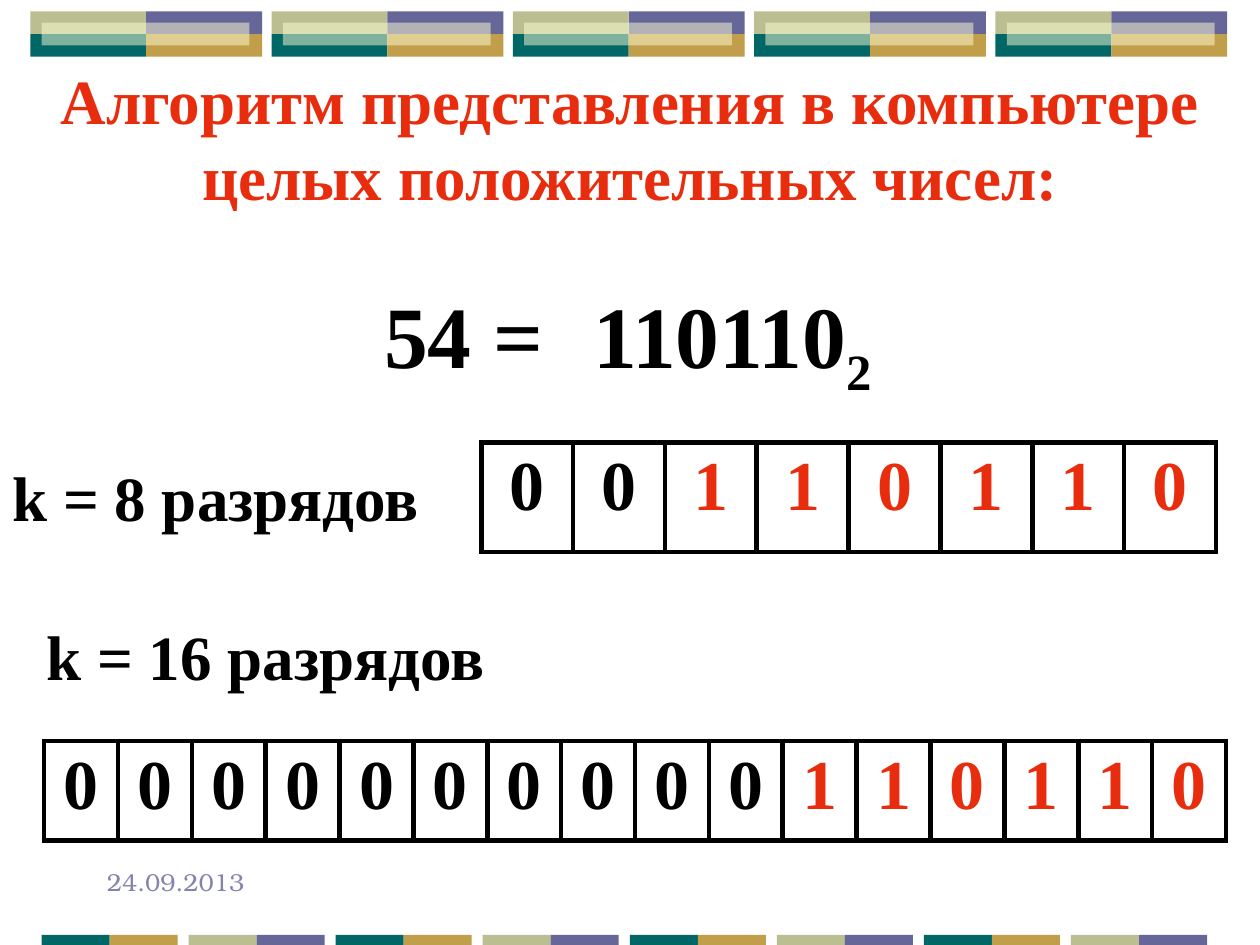
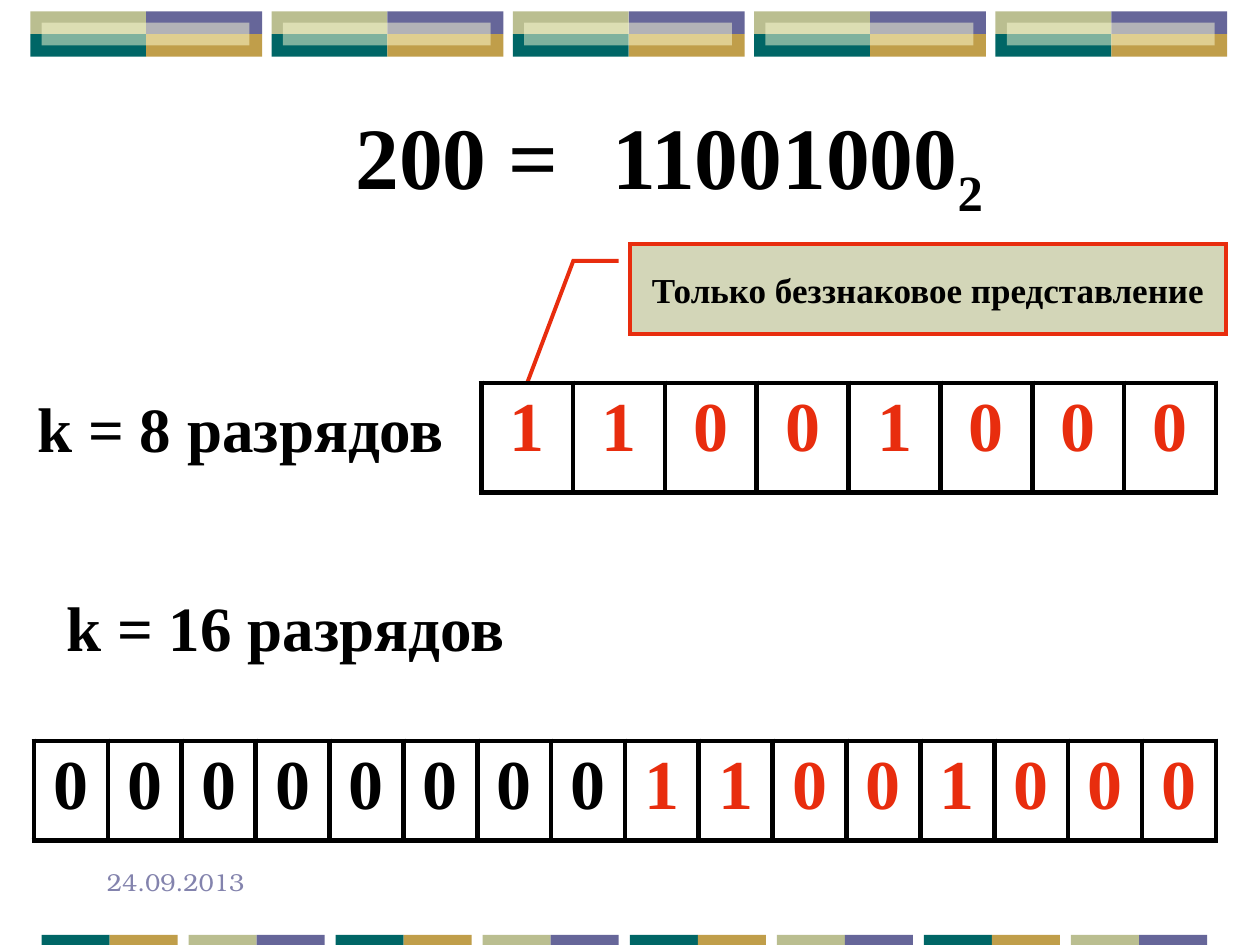
from lxml import etree
from pptx import Presentation
from pptx.dml.color import RGBColor
from pptx.enum import shapes, text
from pptx.oxml.ns import qn
from pptx.util import Inches, Pt

BLACK, RED, GRID = "000000", "E82D0E", "1F2039"
OLIVE, VIOLET, TEAL, GOLD = "BABE90", "666699", "006666", "C09E4A"
CREAM, CALLOUT_FILL, DATE_COLOR = "FEFED6", "D3D6B8", "8383AD"
SERIF, DATE_FONT = "Times New Roman", "TeX Gyre Bonum"


def rgb(color):
    return RGBColor.from_string(color)


def add_run(p, content, size, color=BLACK, font=SERIF, bold=True):
    r = p.add_run()
    r.text = content
    r.font.size, r.font.name, r.font.bold = Pt(size), font, bold
    r.font.color.rgb = rgb(color)
    return r


def add_rect(parent, left, top, width, height, color, alpha=None):
    sp = parent.add_shape(shapes.MSO_SHAPE.RECTANGLE, Inches(left), Inches(top),
                          Inches(width), Inches(height))
    sp.shadow.inherit = False
    sp.fill.solid()
    sp.fill.fore_color.rgb = rgb(color)
    sp.line.fill.background()
    if alpha is not None:
        clr = sp.element.spPr.find(qn("a:solidFill")).find(qn("a:srgbClr"))
        etree.SubElement(clr, qn("a:alpha")).set("val", str(alpha * 1000))


def add_bands(s, layout):
    """Draw the top and bottom bands and hand them over to the layout."""
    group = s.shapes.add_group_shape()
    band = group.shapes
    # Top band: five four-colour tiles with a pale strip over each
    half, row = 0.92, 0.18
    for i in range(5):
        left = 0.24 + i * 7.66 / 4
        for j, color in enumerate((OLIVE, VIOLET, TEAL, GOLD)):
            add_rect(band, left + j % 2 * half, 0.09 + j // 2 * row, half, row, color)
        add_rect(band, left + 0.09, 0.18, 1.65, row, CREAM, alpha=50)
    # Bottom band: eight two-colour bars
    for i in range(8):
        for j, color in enumerate((OLIVE, VIOLET) if i % 2 else (TEAL, GOLD)):
            add_rect(band, 0.33 + i * 8.17 / 7 + j * 0.54, 7.42, 0.54, 0.08, color)
    layout.shapes.element.append(group.element)


def place_text(sp, left, top, width, height):
    sp.left, sp.top = Inches(left), Inches(top)
    sp.width, sp.height = Inches(width), Inches(height)
    tf = sp.text_frame
    tf.word_wrap = True
    tf.auto_size = text.MSO_AUTO_SIZE.NONE
    tf.vertical_anchor = text.MSO_ANCHOR.TOP
    p = tf.paragraphs[0]
    p.alignment = text.PP_ALIGN.LEFT
    return p


def add_text(s, left, top, width, height):
    return place_text(s.shapes.add_textbox(0, 0, 0, 0), left, top, width, height)


def add_label(s, content, left, top, width):
    add_run(add_text(s, left, top, width, 0.7), content, 36)


def add_binary(s, digits, left, top, width):
    p = add_text(s, left, top, width, 0.93)
    add_run(p, digits, 50)
    base = add_run(p, "2", 50)
    base.font._element.set("baseline", "-25000")


def set_borders(cell, color, width=3):
    tcPr = cell._tc.get_or_add_tcPr()
    for i, side in enumerate(("lnL", "lnR", "lnT", "lnB")):
        ln = etree.Element(qn("a:" + side), w=str(Pt(width)))
        fill = etree.SubElement(ln, qn("a:solidFill"))
        etree.SubElement(fill, qn("a:srgbClr")).set("val", color)
        tcPr.insert(i, ln)


def add_grid(s, bits, left, top, width, height, color):
    """One-row table with a cell per bit; returns its cells."""
    table = s.shapes.add_table(1, bits, Inches(left), Inches(top),
                               Inches(width), Inches(height)).table
    table.first_row = table.horz_banding = False
    for i in range(bits):
        table.columns[i].width = Inches(width / bits)
        cell = table.cell(0, i)
        cell.fill.background()
        set_borders(cell, color)
    return [table.cell(0, i) for i in range(bits)]


def fill_digits(cells, digits):
    """Leading zeros in black, the number itself in red."""
    padding = len(cells) - len(digits)
    for i, (cell, digit) in enumerate(zip(cells, digits.zfill(len(cells)))):
        p = cell.text_frame.paragraphs[0]
        p.alignment = text.PP_ALIGN.CENTER
        add_run(p, digit, 40, BLACK if i < padding else RED)


def add_register(s, digits, bits, left, top, digits_on_top=True):
    """Two stacked grids, dark below and black above; one holds the digits."""
    width, height = {8: (5.83, 0.87), 16: (9.38, 0.79)}[bits]
    layers = [add_grid(s, bits, left, top, width, height, color)
              for color in (GRID, BLACK)]
    fill_digits(layers[digits_on_top], digits)


def add_callout(s, content, left, top, width, height, tail):
    sp = s.shapes.add_shape(shapes.MSO_SHAPE.LINE_CALLOUT_2, Inches(left), Inches(top),
                            Inches(width), Inches(height))
    for i, (x, y) in enumerate(tail):
        sp.adjustments[2 * i] = (y - top) / height
        sp.adjustments[2 * i + 1] = (x - left) / width
    sp.shadow.inherit = False
    sp.fill.solid()
    sp.fill.fore_color.rgb = rgb(CALLOUT_FILL)
    sp.line.color.rgb = rgb(RED)
    sp.line.width = Pt(2.25)
    etree.SubElement(sp.element.spPr.find(qn("a:ln")), qn("a:miter")).set("lim", "800000")
    tf = sp.text_frame
    tf.word_wrap = True
    tf.vertical_anchor = text.MSO_ANCHOR.MIDDLE
    p = tf.paragraphs[0]
    p.alignment = text.PP_ALIGN.CENTER
    add_run(p, content, 20)


def add_date(s):
    p = add_text(s, 0.75, 6.83, 2.08, 0.5)
    add_run(p, "24.09.2013", 14, DATE_COLOR, DATE_FONT, bold=False)


def build_54(s):
    number = "110110"
    p = place_text(s.shapes.title, 0, 0.44, 10, 1.3)
    p.alignment = text.PP_ALIGN.CENTER
    add_run(p, "Алгоритм представления в компьютере целых положительных чисел:", 36, RED)
    add_label(s, "k = 16 разрядов", 0.27, 4.85, 4.1)
    add_run(add_text(s, 2.95, 2.18, 1.57, 0.93), "54 =", 50)
    add_binary(s, number, 4.61, 2.18, 2.76)
    add_register(s, number, 8, 3.82, 3.51)
    add_label(s, "k = 8 разрядов", 0, 3.59, 3.66)
    add_register(s, number, 16, 0.35, 5.88)
    add_date(s)


def build_200(s):
    number = "11001000"
    add_run(place_text(s.shapes.title, 2.72, 0.76, 1.89, 0.93), "200 =", 50)
    add_label(s, "k = 16 разрядов", 0.43, 4.62, 4.49)
    add_callout(s, "Только беззнаковое представление", 5, 1.94, 4.73, 0.71,
                tail=((4.91, 2.07), (4.55, 2.07), (4.18, 3.05)))
    add_binary(s, number, 4.76, 0.76, 3.62)
    add_label(s, "k = 8 разрядов", 0.2, 3.04, 3.62)
    add_register(s, number, 8, 3.82, 3.04)
    add_register(s, number, 16, 0.27, 5.88, digits_on_top=False)
    add_date(s)


def main():
    prs = Presentation()
    prs.slide_width, prs.slide_height = Inches(10), Inches(7.5)
    layout = prs.slide_layouts[5]
    # Keep only the title placeholder in the layout
    for ph in list(layout.placeholders)[1:]:
        layout.shapes.element.remove(ph.element)
    first, second = (prs.slides.add_slide(layout) for _ in range(2))
    add_bands(first, layout)
    build_54(first)
    build_200(second)
    prs.save("out.pptx")


if __name__ == "__main__":
    main()
